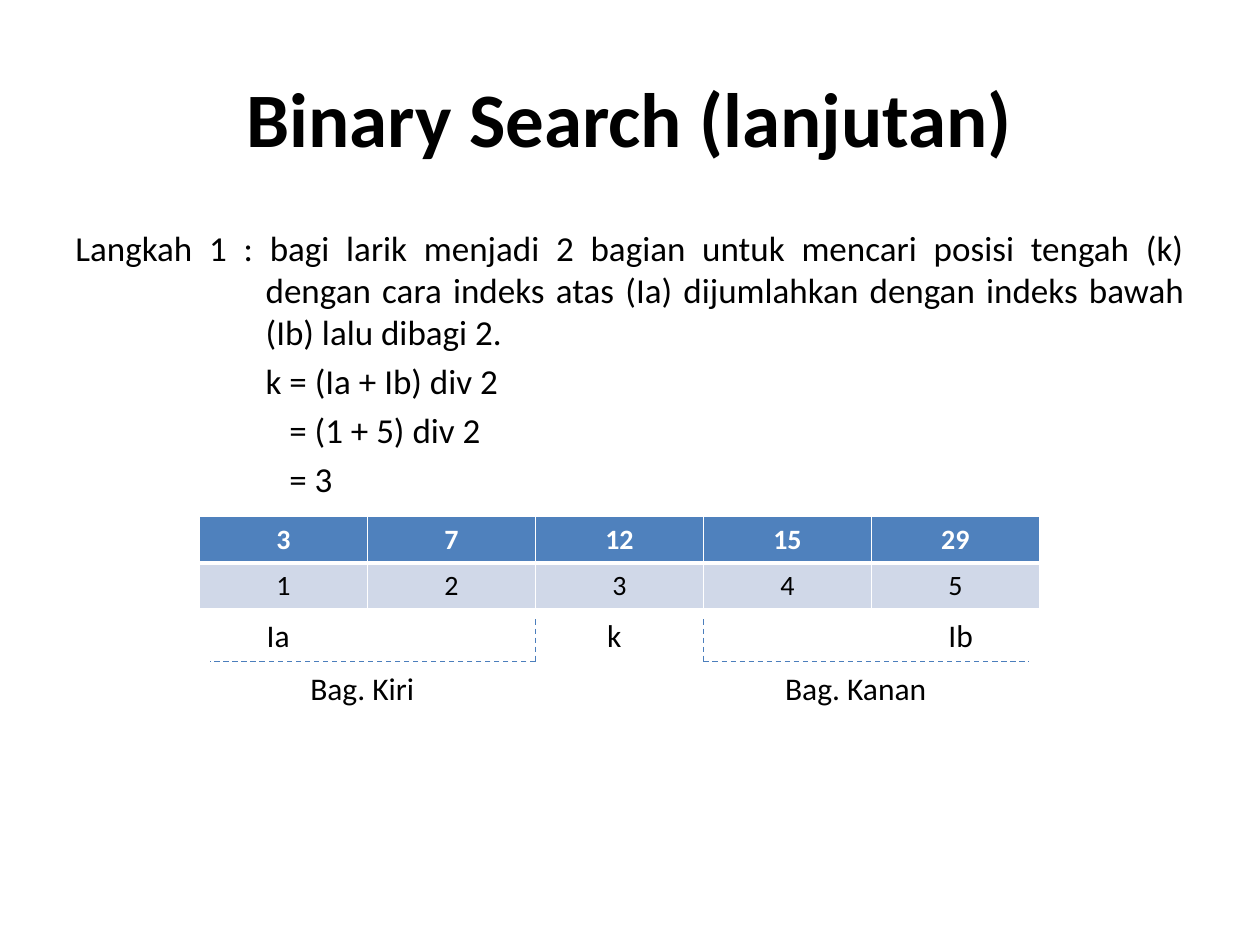
from lxml import etree
from pptx import Presentation
from pptx.dml.color import RGBColor
from pptx.enum.dml import MSO_LINE
from pptx.enum.shapes import MSO_CONNECTOR
from pptx.enum.text import MSO_ANCHOR, PP_ALIGN
from pptx.oxml.ns import qn
from pptx.util import Pt

CENTER, JUSTIFY = PP_ALIGN.CENTER, PP_ALIGN.JUSTIFY
TOP, MIDDLE = MSO_ANCHOR.TOP, MSO_ANCHOR.MIDDLE
DASH = MSO_LINE.DASH
STRAIGHT = MSO_CONNECTOR.STRAIGHT


def rgb(value):
    return RGBColor.from_string(value)


def write(p, text, size=18, color="000000", bold=False, align=CENTER,
          font="Calibri", before=0, left=0, hanging=0):
    p.alignment = align
    p.space_before = Pt(before)
    if left:
        pPr = p._p.get_or_add_pPr()
        pPr.set("marL", str(Pt(left)))
        pPr.set("indent", str(-Pt(hanging)))
    r = p.add_run()
    r.text = text
    r.font.name = font
    r.font.size = Pt(size)
    r.font.bold = bold
    r.font.color.rgb = rgb(color)


class Deck:
    head_fill, body_fill = "4F81BD", "D0D8E8"
    border, line_color = "FFFFFF", "4B7EBC"

    def __init__(self, width, height):
        self.prs = Presentation()
        self.prs.slide_width, self.prs.slide_height = Pt(width), Pt(height)
        self.s = self.prs.slides.add_slide(self.prs.slide_layouts[5])

    def title(self, text, x, y, w, h):
        sp = self.s.shapes.title
        sp.left, sp.top, sp.width, sp.height = Pt(x), Pt(y), Pt(w), Pt(h)
        sp.text_frame.vertical_anchor = MIDDLE
        write(sp.text_frame.paragraphs[0], text, size=44, bold=True)

    def box(self, x, y, w, h, anchor, wrap):
        tf = self.s.shapes.add_textbox(Pt(x), Pt(y), Pt(w), Pt(h)).text_frame
        tf.word_wrap = wrap
        tf.vertical_anchor = anchor
        return tf

    def body(self, lines, x, y, w, h):
        tf = self.box(x, y, w, h, TOP, True)
        for i, (text, left, hanging) in enumerate(lines):
            p = tf.add_paragraph() if i else tf.paragraphs[0]
            write(p, text, size=20, align=JUSTIFY, before=4,
                  left=left, hanging=hanging)

    def label(self, text, x, y, w, h=18):
        tf = self.box(x, y, w, h, MIDDLE, False)
        tf.margin_left = tf.margin_right = tf.margin_top = tf.margin_bottom = 0
        write(tf.paragraphs[0], text)

    def cell_borders(self, cell, **widths):
        tcPr = cell._tc.get_or_add_tcPr()
        for side in "LRTB":
            ln = etree.SubElement(tcPr, qn(f"a:ln{side}"),
                                  w=str(Pt(widths.get(side, 1))))
            fill = etree.SubElement(ln, qn("a:solidFill"))
            etree.SubElement(fill, qn("a:srgbClr"), val=self.border)

    def table(self, rows, x, y, col_w, row_h):
        cols = len(rows[0])
        tbl = self.s.shapes.add_table(len(rows), cols, Pt(x), Pt(y),
                                      Pt(col_w * cols),
                                      Pt(row_h * len(rows))).table
        for col in tbl.columns:
            col.width = Pt(col_w)
        for i, values in enumerate(rows):
            tbl.rows[i].height = Pt(row_h)
            head = i == 0
            for j, value in enumerate(values):
                cell = tbl.cell(i, j)
                self.cell_borders(cell, **({"B": 3} if head else {"T": 3}))
                cell.fill.solid()
                cell.fill.fore_color.rgb = rgb(
                    self.head_fill if head else self.body_fill)
                write(cell.text_frame.paragraphs[0], str(value), size=16,
                      color="FFFFFF" if head else "000000", bold=head)

    def line(self, x1, y1, x2, y2):
        c = self.s.shapes.add_connector(STRAIGHT, Pt(x1), Pt(y1),
                                        Pt(x2), Pt(y2))
        c.line.color.rgb = rgb(self.line_color)
        c.line.width = Pt(0.75)
        c.line.dash_style = DASH
        etree.SubElement(c._element.spPr, qn("a:effectLst"))


def main():
    deck = Deck(720, 540)
    deck.title("Binary Search (lanjutan)", 36, 21.6, 648, 90)

    indent = 108.75
    deck.body([
        ("Langkah 1 : bagi larik menjadi 2 bagian untuk mencari posisi tengah "
         "(k) dengan cara indeks atas (Ia) dijumlahkan dengan indeks bawah "
         "(Ib) lalu dibagi 2.", indent, indent),
        ("k = (Ia + Ib) div 2", indent, 0),
        ("= (1 + 5) div 2", indent + 13.5, 0),
        ("= 3", indent + 13.5, 0),
    ], 36, 126, 648, 356.4)

    table_x, col_w = 114, 96
    deck.table([(3, 7, 12, 15, 29), range(1, 6)], table_x, 295.2, col_w, 26.4)

    top, bottom = 354, 378
    for text, x in (("Ia", 144), ("k", 336), ("Ib", 534)):
        deck.label(text, x, top, 30)

    for inner, outer in ((table_x + 2 * col_w, table_x + 6),
                         (table_x + 3 * col_w, table_x + 5 * col_w - 6)):
        deck.line(inner, top, inner, bottom)
        deck.line(inner, bottom, outer, bottom)

    deck.label("Bag. Kiri", 168, 384, 78)
    deck.label("Bag. Kanan", 438, 384, 102)
    deck.prs.save("out.pptx")


if __name__ == "__main__":
    main()
